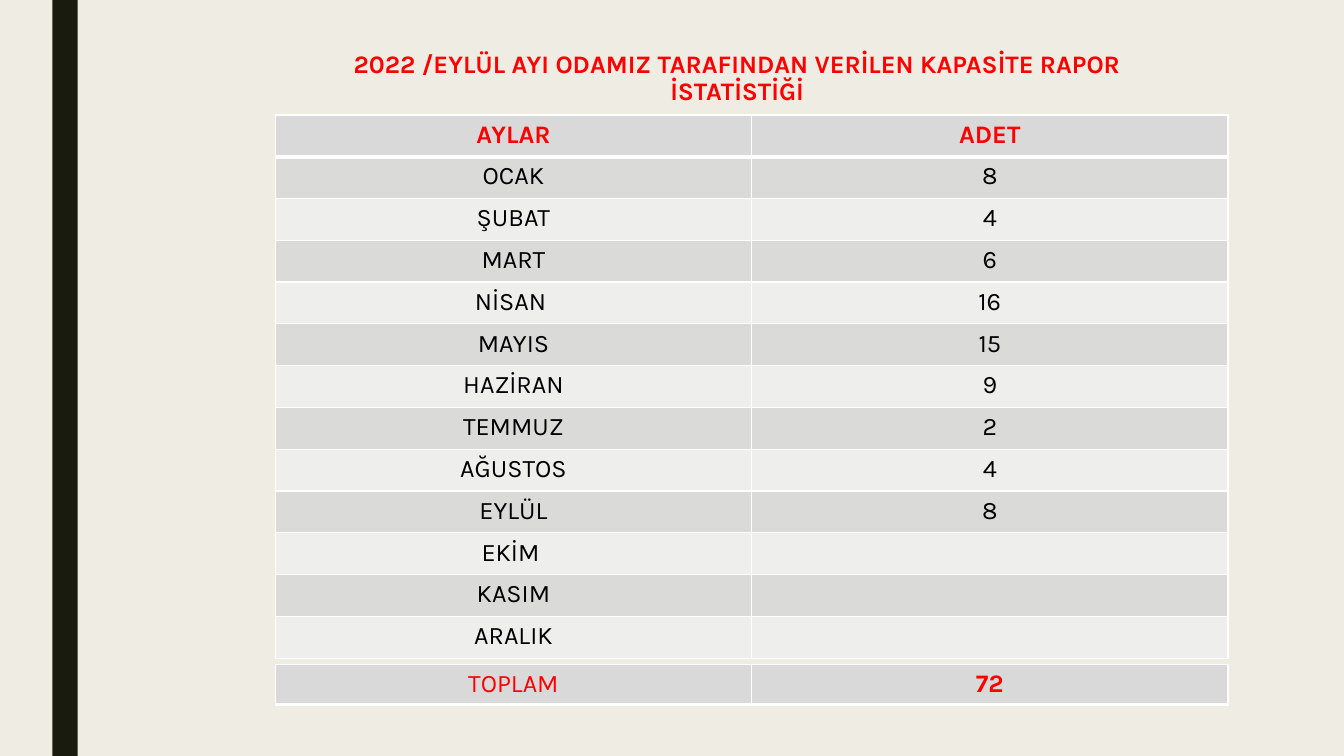
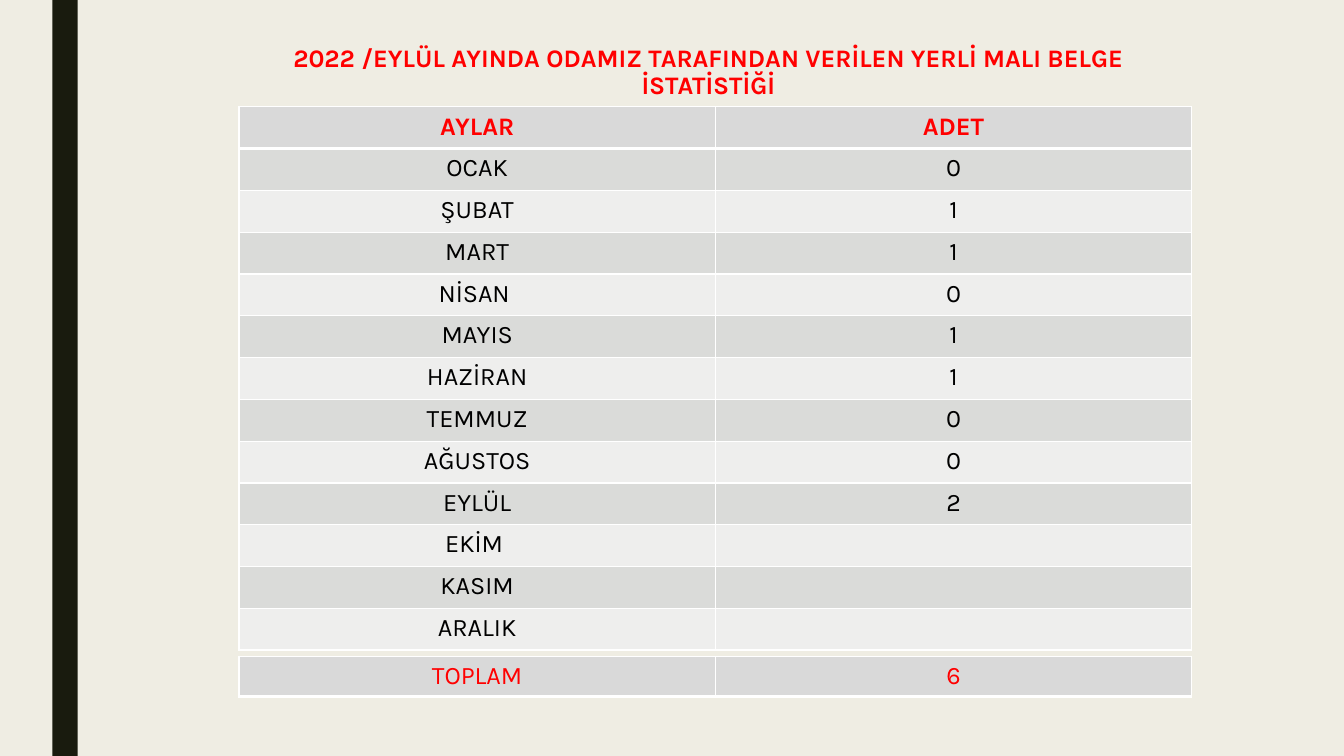
from dataclasses import dataclass

import lxml.etree
import pptx
import pptx.dml.color
import pptx.enum.shapes
import pptx.enum.text
import pptx.oxml.ns
import pptx.presentation
import pptx.slide
import pptx.table
import pptx.text.text
import pptx.util

RGB = pptx.dml.color.RGBColor
CREAM = RGB(0xEF, 0xED, 0xE3)
DARK = RGB(0x19, 0x1B, 0x0E)
RED = RGB(0xFF, 0x00, 0x00)
BLACK = RGB(0x00, 0x00, 0x00)
WHITE = RGB(0xFF, 0xFF, 0xFF)
HEAD = RGB(0xD9, 0xD9, 0xD9)
BANDS = (RGB(0xDA, 0xDB, 0xD9), RGB(0xEE, 0xEE, 0xED))

FONT = "Karla"
SIZE = pptx.util.Pt(18)
CENTER = pptx.enum.text.PP_ALIGN.CENTER
THIN, THICK = 1, 3

WIDE, HIGH = pptx.util.Inches(13.33), pptx.util.Inches(7.5)
COLS, ROWS = 1333, 750
SPAN, DEPTH = 945, 539
SUM_DROP, SUM_HIGH = 545, 40

MONTHS = ("OCAK", "ŞUBAT", "MART", "NİSAN ", "MAYIS", "HAZİRAN",
          "TEMMUZ", "AĞUSTOS", "EYLÜL", "EKİM ", "KASIM", "ARALIK")


@dataclass(frozen=True)
class Box:
    left: int
    top: int
    wide: int
    high: int

    def place(self) -> tuple[int, int, int, int]:
        return (WIDE * self.left // COLS, HIGH * self.top // ROWS,
                WIDE * self.wide // COLS, HIGH * self.high // ROWS)


@dataclass(frozen=True)
class Text:
    words: str
    ink: RGB = BLACK
    bold: bool = False


@dataclass(frozen=True)
class Row:
    cells: tuple[Text, Text]
    fill: RGB
    over: int = THIN
    under: int = THIN


@dataclass(frozen=True)
class Page:
    title: str
    frame: Box
    left: int
    top: int
    counts: tuple[int, ...]
    bold: bool


BAR = Box(52, 0, 25, ROWS)
PAGES = (
    Page("2022 /EYLÜL AYI ODAMIZ TARAFINDAN VERİLEN KAPASİTE RAPOR İSTATİSTİĞİ",
         Box(300, 47, 862, 55), 273, 114, (8, 4, 6, 16, 15, 9, 2, 4, 8), True),
    Page("2022 /EYLÜL AYINDA ODAMIZ TARAFINDAN VERİLEN YERLİ MALI BELGE İSTATİSTİĞİ",
         Box(237, 41, 931, 58), 237, 106, (0, 1, 1, 0, 1, 1, 0, 0, 2), False),
)


def write(frame: pptx.text.text.TextFrame, text: Text) -> None:
    line = frame.paragraphs[0]
    line.alignment = CENTER
    line.font.size = SIZE
    if text.words:
        run = line.add_run()
        run.text = text.words
        run.font.name = FONT
        run.font.size = SIZE
        run.font.bold = text.bold
        run.font.color.rgb = text.ink


def edge(cell: pptx.table._Cell, side: str, points: int) -> None:
    name = pptx.oxml.ns.qn
    props = cell._tc.get_or_add_tcPr()
    line = lxml.etree.SubElement(props, name(f"a:ln{side}"), w=str(pptx.util.Pt(points)))
    fill = lxml.etree.SubElement(line, name("a:solidFill"))
    lxml.etree.SubElement(fill, name("a:srgbClr"), val=str(WHITE))


def draw_grid(slide: pptx.slide.Slide, box: Box, rows: list[Row]) -> None:
    place = box.place()
    table = slide.shapes.add_table(len(rows), 2, *place).table
    table.first_row = False
    table.horz_banding = False
    for spot, row in enumerate(rows):
        table.rows[spot].height = place[3] // len(rows)
        for cell, text in zip(table.rows[spot].cells, row.cells):
            for side, points in zip("LRTB", (THIN, THIN, row.over, row.under)):
                edge(cell, side, points)
            cell.fill.solid()
            cell.fill.fore_color.rgb = row.fill
            write(cell.text_frame, text)


def draw_title(slide: pptx.slide.Slide, page: Page) -> None:
    title = slide.shapes.title
    title.left, title.top, title.width, title.height = page.frame.place()
    frame = title.text_frame
    frame.word_wrap = True
    frame.auto_size = pptx.enum.text.MSO_AUTO_SIZE.NONE
    frame.vertical_anchor = pptx.enum.text.MSO_ANCHOR.TOP
    write(frame, Text(page.title, RED, True))
    frame.paragraphs[0].line_spacing = 0.89


def draw_page(slide: pptx.slide.Slide, page: Page) -> None:
    draw_title(slide, page)
    rows = [Row((Text("AYLAR", RED, True), Text("ADET", RED, True)), HEAD, under=THICK)]
    for spot, month in enumerate(MONTHS):
        count = str(page.counts[spot]) if spot < len(page.counts) else ""
        rows.append(Row((Text(month), Text(count)), BANDS[spot % 2],
                        over=THIN if spot else THICK))
    draw_grid(slide, Box(page.left, page.top, SPAN, DEPTH), rows)
    total = Text(str(sum(page.counts)), RED, page.bold)
    draw_grid(slide, Box(page.left, page.top + SUM_DROP, SPAN, SUM_HIGH),
              [Row((Text("TOPLAM", RED), total), HEAD, under=THICK)])


def style_master(deck: pptx.presentation.Presentation, slide: pptx.slide.Slide) -> None:
    master = deck.slide_master
    master.background.fill.solid()
    master.background.fill.fore_color.rgb = CREAM
    bar = slide.shapes.add_shape(pptx.enum.shapes.MSO_SHAPE.RECTANGLE, *BAR.place())
    bar.shadow.inherit = False
    bar.fill.solid()
    bar.fill.fore_color.rgb = DARK
    bar.line.fill.background()
    master.shapes.element.insert(2, bar.element)


def main() -> None:
    deck = pptx.Presentation()
    deck.slide_width, deck.slide_height = WIDE, HIGH
    slides = [deck.slides.add_slide(deck.slide_layouts[5]) for _ in PAGES]
    style_master(deck, slides[0])
    for slide, page in zip(slides, PAGES):
        draw_page(slide, page)
    deck.save("out.pptx")


if __name__ == "__main__":
    main()
